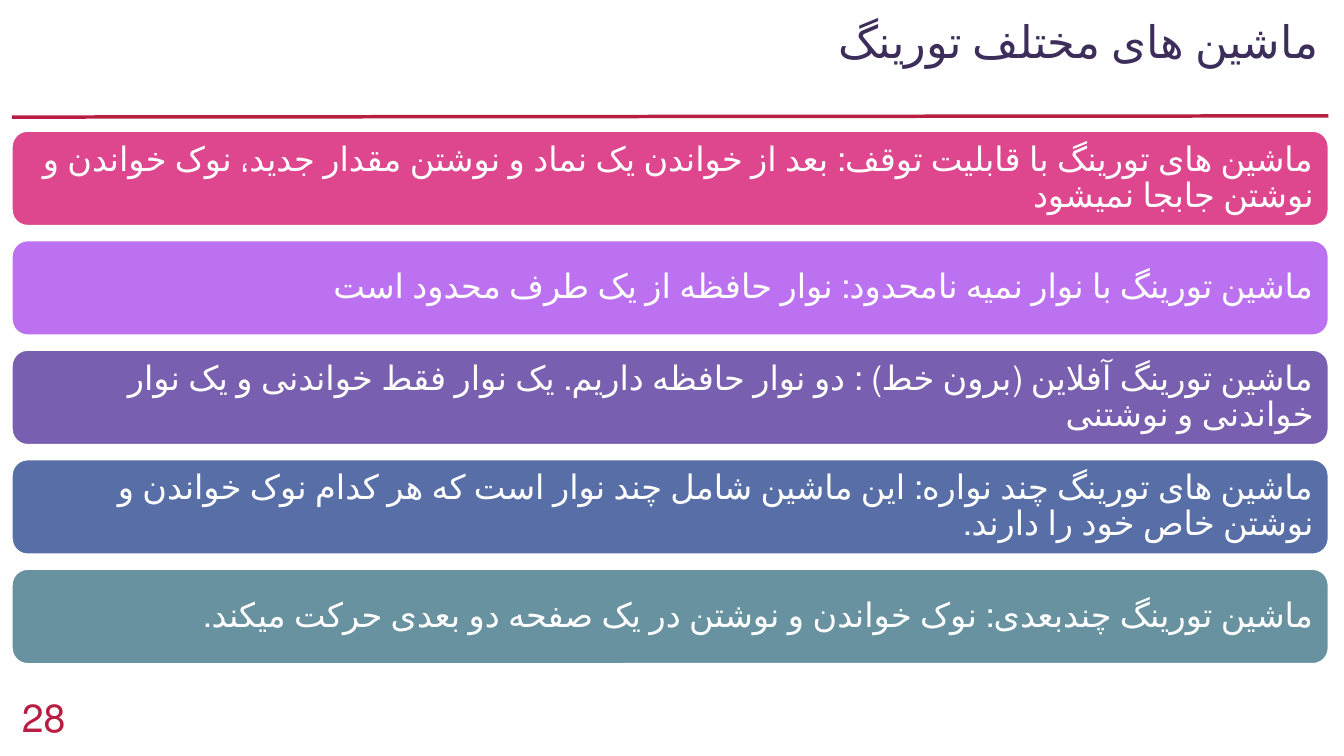
from lxml.etree import SubElement
from pptx import Presentation
from pptx.dml.color import RGBColor
from pptx.enum.lang import MSO_LANGUAGE_ID
from pptx.enum.shapes import MSO_CONNECTOR, MSO_SHAPE
from pptx.enum.text import MSO_ANCHOR, PP_ALIGN
from pptx.oxml.ns import qn
from pptx.util import Cm, Pt


def rgb(color):
    return RGBColor.from_string(color)


def write(sp, text, size, color, align, anchor, spacing):
    tf = sp.text_frame
    tf.word_wrap = True
    tf.vertical_anchor = anchor
    p = tf.paragraphs[0]
    p.text = text
    p.alignment = align
    p.line_spacing = spacing
    p.font.name = "Calibri"
    p.font.size = Pt(size)
    p.font.color.rgb = rgb(color)
    p.font.language_id = MSO_LANGUAGE_ID.FARSI
    p._p.get_or_add_pPr().set("rtl", "1")
    return tf


prs = Presentation()
prs.slide_width = Cm(33.87)
prs.slide_height = Cm(19.05)
s = prs.slides.add_slide(prs.slide_layouts[6])

rule = s.shapes.add_connector(MSO_CONNECTOR.STRAIGHT, Cm(0.3), Cm(2.95), Cm(33.48), Cm(2.92))
rule.line.color.rgb = rgb("B71E42")
rule.line.width = Pt(2.5)
SubElement(rule._element.spPr, qn("a:effectLst"))

title = s.shapes.add_textbox(Cm(3.63), Cm(0.38), Cm(29.85), Cm(2.31))
write(title, "ماشین های مختلف تورینگ", 32, "3C2D5A", PP_ALIGN.RIGHT, MSO_ANCHOR.TOP, 0.9)

number = s.shapes.add_textbox(Cm(0.3), Cm(17.35), Cm(2.26), Cm(1.4))
write(number, "28", 28, "B71E42", PP_ALIGN.LEFT, MSO_ANCHOR.TOP, 1.0)

machines = [
    ("DE478E", "ماشین های تورینگ با قابلیت توقف: بعد از خواندن یک نماد و نوشتن مقدار جدید، نوک خواندن و نوشتن جابجا نمیشود"),
    ("BC72F0", "ماشین تورینگ با نوار نمیه نامحدود: نوار حافظه از یک طرف محدود است"),
    ("795FAF", "ماشین تورینگ آفلاین (برون خط) : دو نوار حافظه داریم. یک نوار فقط خواندنی و یک نوار خواندنی و نوشتنی"),
    ("586EA6", "ماشین های تورینگ چند نواره: این ماشین شامل چند نوار است که هر کدام نوک خواندن و نوشتن خاص خود را دارند."),
    ("6892A0", "ماشین تورینگ چندبعدی: نوک خواندن و نوشتن در یک صفحه دو بعدی حرکت میکند."),
]
for i, (color, text) in enumerate(machines):
    sp = s.shapes.add_shape(MSO_SHAPE.ROUNDED_RECTANGLE, Cm(0.3), Cm(3.3 + 2.76 * i), Cm(33.18), Cm(2.39))
    sp.shadow.inherit = False
    sp.fill.solid()
    sp.fill.fore_color.rgb = rgb(color)
    sp.line.color.rgb = rgb("FFFFFF")
    sp.line.width = Pt(1.25)
    tf = write(sp, text, 24, "FFFFFF", PP_ALIGN.RIGHT, MSO_ANCHOR.MIDDLE, 0.9)
    tf.margin_left = tf.margin_right = tf.margin_top = tf.margin_bottom = Cm(0.25)

prs.save("out.pptx")
